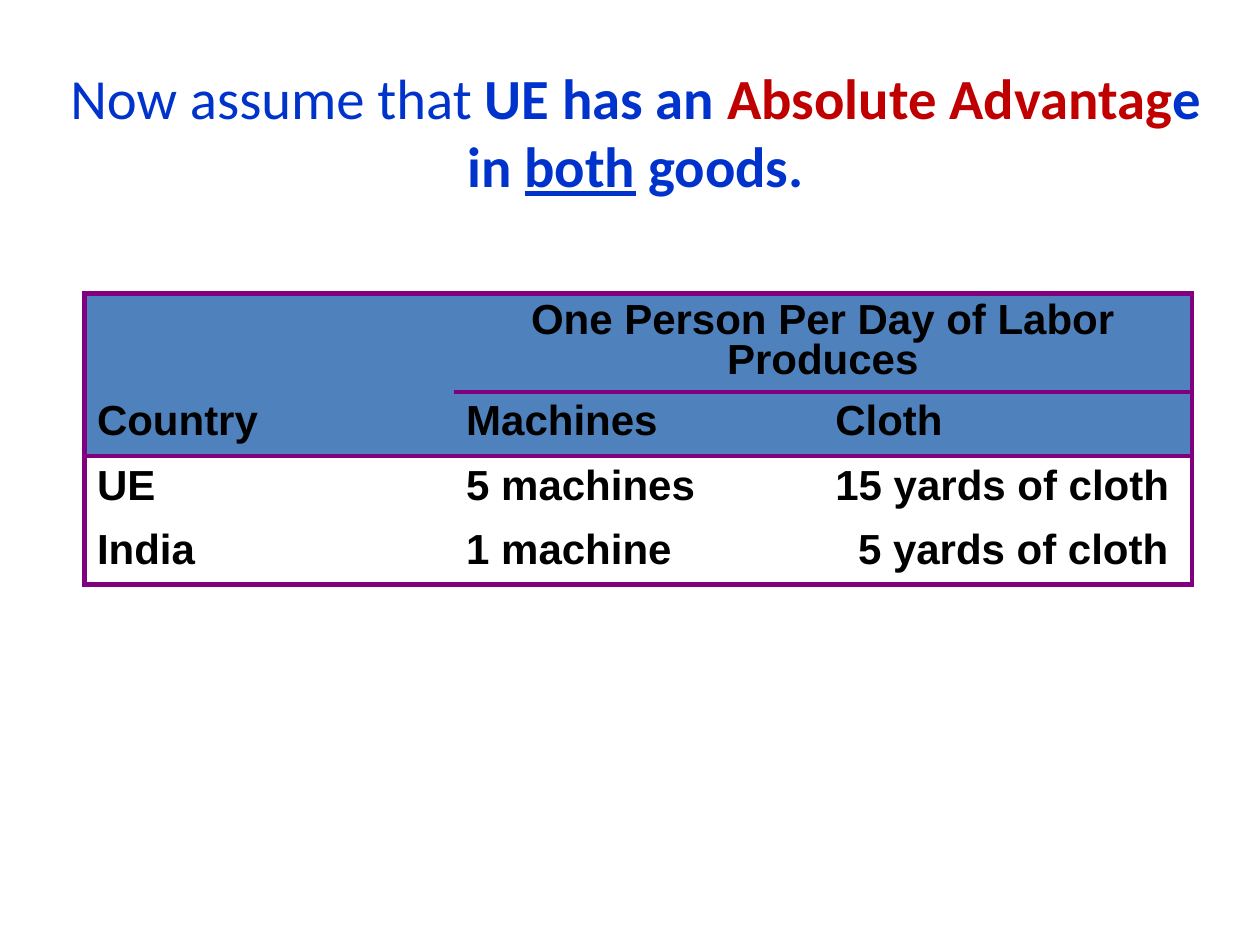
from dataclasses import dataclass

from lxml.etree import SubElement
from pptx import Presentation
from pptx.dml.color import RGBColor
from pptx.enum.text import MSO_ANCHOR, PP_ALIGN
from pptx.oxml.ns import qn
from pptx.util import Inches, Pt


@dataclass(frozen=True)
class Theme:
    blue: str = "0033CC"
    red: str = "C00000"
    black: str = "000000"
    header_fill: str = "4F81BD"
    border: str = "800080"
    title_font: str = "Calibri"
    table_font: str = "Arial"
    title_size: float = 32.4
    table_size: float = 24
    border_width: float = 3


THEME = Theme()
SLIDE_SIZE = (10, 7.5)
TITLE_BOX = (0.28, 0.29, 9.53, 1.34)
TABLE_ORIGIN = (0.67, 2.33)
COLUMN_WIDTH = 2.93
ROW_HEIGHTS = (0.78, 0.51, 0.51, 0.51)
HEADER_ROWS = 2
DIGIT_INDENT = 0.18

TITLE_RUNS = [
    ("Now assume that ", THEME.blue, {}),
    ("UE has an ", THEME.blue, {"bold": True}),
    ("Absolute Advantag", THEME.red, {"bold": True}),
    ("e in ", THEME.blue, {"bold": True}),
    ("both", THEME.blue, {"bold": True, "underline": True}),
    (" goods.", THEME.blue, {"bold": True}),
]
TABLE_ROWS = [
    ("", "One Person Per Day of Labor Produces", ""),
    ("Country", "Machines", "Cloth"),
    ("UE", "5 machines", "15 yards of cloth"),
    ("India", "1 machine", "5 yards of cloth"),
]


def apply_format(target, values):
    for name, value in values.items():
        setattr(target, name, value)


def add_run(paragraph, text, color, values):
    run = paragraph.add_run()
    run.text = text
    apply_format(run.font, values)
    run.font.color.rgb = RGBColor.from_string(color)


def add_title(slide):
    shape = slide.shapes.add_textbox(*map(Inches, TITLE_BOX))
    frame = shape.text_frame
    apply_format(frame, {"word_wrap": True, "vertical_anchor": MSO_ANCHOR.BOTTOM})
    paragraph = frame.paragraphs[0]
    paragraph.alignment = PP_ALIGN.CENTER
    base = {"name": THEME.title_font, "size": Pt(THEME.title_size)}
    for text, color, values in TITLE_RUNS:
        add_run(paragraph, text, color, base | values)


def set_borders(cell, visible):
    properties = cell._tc.get_or_add_tcPr()
    for position, (side, shown) in enumerate(visible.items()):
        line = SubElement(properties, qn(f"a:ln{side}"))
        properties.insert(position, line)
        if shown:
            line.set("w", str(Pt(THEME.border_width)))
            fill = SubElement(line, qn("a:solidFill"))
            SubElement(fill, qn("a:srgbClr"), val=THEME.border)
        else:
            SubElement(line, qn("a:noFill"))


def has_rule(edge, column):
    return edge in (0, HEADER_ROWS, len(TABLE_ROWS)) or (edge == 1 and column > 0)


def format_cell(cell, row, column, text):
    cell.vertical_anchor = MSO_ANCHOR.MIDDLE
    if row < HEADER_ROWS:
        cell.fill.solid()
        cell.fill.fore_color.rgb = RGBColor.from_string(THEME.header_fill)
    else:
        cell.fill.background()
    last_column = column + (cell.span_width if cell.is_merge_origin else 1) - 1
    set_borders(cell, {
        "L": column == 0,
        "R": last_column == len(TABLE_ROWS[0]) - 1,
        "T": has_rule(row, column),
        "B": has_rule(row + 1, column),
    })
    if not text:
        return
    paragraph = cell.text_frame.paragraphs[0]
    apply_format(paragraph, {
        "alignment": PP_ALIGN.CENTER if cell.is_merge_origin else PP_ALIGN.LEFT,
        "line_spacing": 0.85,
        "space_before": Pt(0.2 * THEME.table_size),
    })
    add_run(paragraph, text, THEME.black, {
        "name": THEME.table_font, "size": Pt(THEME.table_size), "bold": True,
    })


def add_production_table(slide):
    column_count = len(TABLE_ROWS[0])
    size = (column_count * COLUMN_WIDTH, sum(ROW_HEIGHTS))
    table = slide.shapes.add_table(
        len(TABLE_ROWS), column_count, *map(Inches, TABLE_ORIGIN + size)
    ).table
    apply_format(table, {"first_row": False, "horz_banding": False})
    for column in table.columns:
        column.width = Inches(COLUMN_WIDTH)
    for row, height in zip(table.rows, ROW_HEIGHTS):
        row.height = Inches(height)
    table.cell(0, 1).merge(table.cell(0, column_count - 1))
    for row, texts in enumerate(TABLE_ROWS):
        for column, text in enumerate(texts):
            format_cell(table.cell(row, column), row, column, text)
    table.cell(len(TABLE_ROWS) - 1, column_count - 1).margin_left = Inches(0.1 + DIGIT_INDENT)


def main():
    presentation = Presentation()
    width, height = map(Inches, SLIDE_SIZE)
    apply_format(presentation, {"slide_width": width, "slide_height": height})
    slide = presentation.slides.add_slide(presentation.slide_layouts[6])
    add_production_table(slide)
    add_title(slide)
    presentation.save("out.pptx")


if __name__ == "__main__":
    main()
